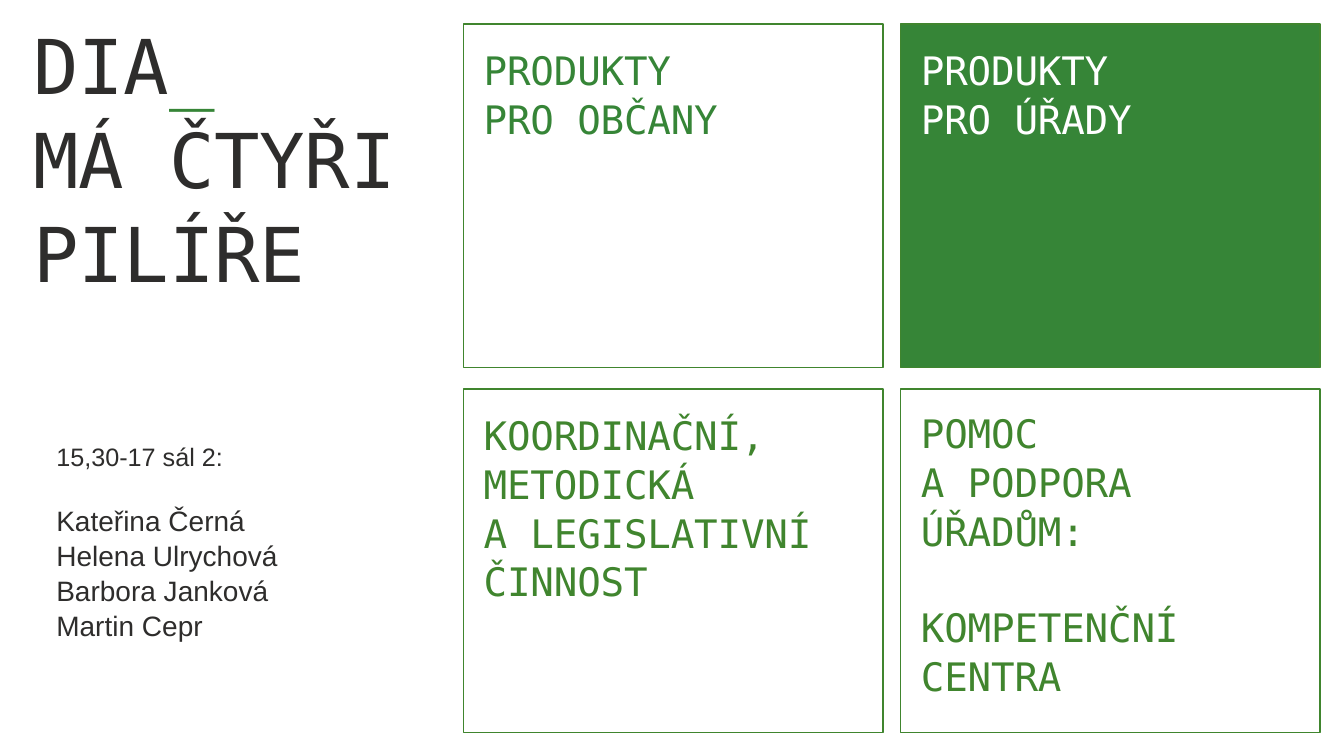
from pptx import Presentation
from pptx.dml.color import RGBColor
from pptx.enum import shapes, text
from pptx.util import Cm, Pt

GREEN = RGBColor(0x36, 0x85, 0x37)
LEAF = RGBColor(0x40, 0x85, 0x2E)
DARK = RGBColor(0x2E, 0x2D, 0x2C)
WHITE = RGBColor(0xFF, 0xFF, 0xFF)
MONO = "DejaVu Sans Mono"
LINE_SPACING = 1.04


def add_span(para, words, size, font, color, tracking=0):
    """Add one run; tracking is in hundredths of a point."""
    span = para.add_run()
    span.text = words
    span.font.size = Pt(size)
    span.font.name = font
    span.font.color.rgb = color
    if tracking:
        span.font._element.set("spc", str(tracking))


def prepare_frame(box, left=0, top=0):
    """Set top-anchored, wrapping text with the given insets in cm."""
    frame = box.text_frame
    frame.word_wrap = True
    frame.vertical_anchor = text.MSO_ANCHOR.TOP
    frame.margin_left, frame.margin_top = Cm(left), Cm(top)
    frame.margin_right = frame.margin_bottom = 0
    return frame


deck = Presentation()
deck.slide_width, deck.slide_height = Cm(33.87), Cm(19.05)
page = deck.slides.add_slide(deck.slide_layouts[6])

# Title
title = page.shapes.add_textbox(Cm(0.84), Cm(0.38), Cm(9.73), Cm(14.02))
para = prepare_frame(title).paragraphs[0]
para.line_spacing = LINE_SPACING
add_span(para, "DIA", 54, MONO, DARK, -20)
add_span(para, "_", 54, MONO, GREEN, -20)
para.add_line_break()
add_span(para, "MÁ ČTYŘI PILÍŘE", 54, MONO, DARK, -15)

# Four pillars: column, row, fill, text colour, first line spacing, lines, gap before line
pillars = [
    (0, 0, None, GREEN, LINE_SPACING, ["PRODUKTY", "PRO OBČANY"], None),
    (1, 0, GREEN, WHITE, LINE_SPACING, ["PRODUKTY", "PRO ÚŘADY"], None),
    (1, 1, None, LEAF, 1.0,
     ["POMOC", "A PODPORA", "ÚŘADŮM:", "KOMPETENČNÍ", "CENTRA"], 3),
    (0, 1, None, LEAF, LINE_SPACING,
     ["KOORDINAČNÍ,", "METODICKÁ", "A LEGISLATIVNÍ", "ČINNOST"], None),
]
for column, row, fill, color, first_spacing, lines, gap_line in pillars:
    card = page.shapes.add_shape(
        shapes.MSO_SHAPE.RECTANGLE,
        Cm(11.68 + column * 11.02), Cm(0.61 + row * 9.19), Cm(10.57), Cm(8.66))
    card.shadow.inherit = False
    card.line.color.rgb = LEAF
    card.line.width = Pt(1)
    if fill is None:
        card.fill.background()
    else:
        card.fill.solid()
        card.fill.fore_color.rgb = fill
    frame = prepare_frame(card, 0.51, 0.51)
    for index, line in enumerate(lines):
        para = frame.add_paragraph() if index else frame.paragraphs[0]
        para.alignment = text.PP_ALIGN.LEFT
        para.line_spacing = LINE_SPACING if index else first_spacing
        if index == gap_line:
            para.space_before = Pt(34)
        add_span(para, line, 28, MONO, color, -10)

# Session and speakers
session = page.shapes.add_textbox(Cm(1.42), Cm(11.1), Cm(8.61), Cm(5.08))
frame = prepare_frame(session)
speakers = ["Kateřina Černá", "Helena Ulrychová", "Barbora Janková", "Martin Cepr"]
for index, line in enumerate(["15,30-17 sál 2:"] + speakers):
    para = frame.add_paragraph() if index else frame.paragraphs[0]
    para.line_spacing = LINE_SPACING
    if index == 1:
        para.space_before = Pt(21.5)
    add_span(para, line, 20 if index else 18, "Arial", DARK)

deck.save("out.pptx")
